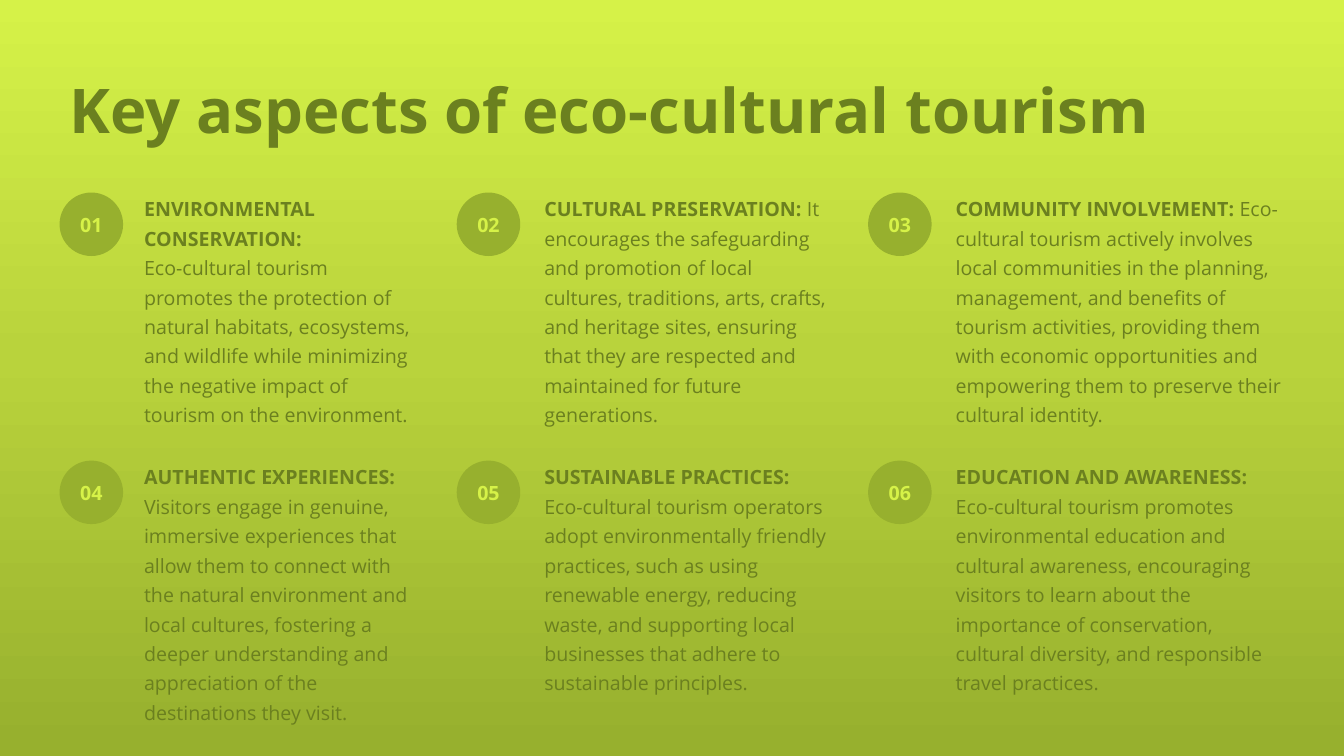
import copy
from dataclasses import dataclass

import pptx
import pptx.dml.color
import pptx.enum.shapes
import pptx.enum.text
import pptx.slide
import pptx.text.text
import pptx.util

FONT = "Open Sans"
LIME, MOSS, OLIVE = "D6F248", "97B02E", "6B801F"
GRADIENT = [(0, LIME), (0.47, "B9D33C"), (0.99, MOSS)]
WIDTH, HEIGHT = pptx.util.Inches(13.33), pptx.util.Inches(7.5)


@dataclass(frozen=True)
class Box:
    """Left, top, width and height in percent of the slide."""

    left: float
    top: float
    width: float
    height: float

    def emu(self) -> tuple[int, int, int, int]:
        return (
            round(WIDTH * self.left / 100),
            round(HEIGHT * self.top / 100),
            round(WIDTH * self.width / 100),
            round(HEIGHT * self.height / 100),
        )


@dataclass(frozen=True)
class Column:
    badge: float
    text: float
    width: float


@dataclass(frozen=True)
class Aspect:
    heading: str
    body: str
    height: float = 32.4
    break_after: bool = False


TITLE = Box(4.43, 5.33, 83.27, 19.33)
COLUMNS = [Column(4.43, 9.98, 21.9), Column(33.98, 39.76, 22.8), Column(64.59, 70.37, 26.03)]
ROWS = [24.67, 60.13]
BADGE_DROP, BADGE_WIDTH, BADGE_HEIGHT = 0.8, 4.73, 8.4

ASPECTS = [
    Aspect(
        "ENVIRONMENTAL CONSERVATION: ",
        "Eco-cultural tourism promotes the protection of natural habitats, ecosystems, and "
        "wildlife while minimizing the negative impact of tourism on the environment.",
        break_after=True,
    ),
    Aspect(
        "CULTURAL PRESERVATION: ",
        "It encourages the safeguarding and promotion of local cultures, traditions, arts, "
        "crafts, and heritage sites, ensuring that they are respected and maintained for "
        "future generations.",
    ),
    Aspect(
        "COMMUNITY INVOLVEMENT: ",
        "Eco-cultural tourism actively involves local communities in the planning, management, "
        "and benefits of tourism activities, providing them with economic opportunities and "
        "empowering them to preserve their cultural identity.",
    ),
    Aspect(
        "AUTHENTIC EXPERIENCES: ",
        "Visitors engage in genuine, immersive experiences that allow them to connect with the "
        "natural environment and local cultures, fostering a deeper understanding and "
        "appreciation of the destinations they visit.",
        height=36.4,
    ),
    Aspect(
        "SUSTAINABLE PRACTICES: ",
        "Eco-cultural tourism operators adopt environmentally friendly practices, such as using "
        "renewable energy, reducing waste, and supporting local businesses that adhere to "
        "sustainable principles.",
    ),
    Aspect(
        "EDUCATION AND AWARENESS: ",
        "Eco-cultural tourism promotes environmental education and cultural awareness, "
        "encouraging visitors to learn about the importance of conservation, cultural "
        "diversity, and responsible travel practices.",
    ),
]


def rgb(value: str) -> pptx.dml.color.RGBColor:
    return pptx.dml.color.RGBColor.from_string(value)


def set_font(p: pptx.text.text._Paragraph, size: float, color: str, bold: bool | None = None) -> None:
    p.font.name = FONT
    p.font.size = pptx.util.Pt(size)
    p.font.bold = bold
    p.font.color.rgb = rgb(color)


def paint_background(s: pptx.slide.Slide) -> None:
    fill = s.background.fill
    fill.gradient()
    fill.gradient_angle = 270
    stops = s.element.xpath(".//a:gsLst")[0]
    stops.append(copy.deepcopy(stops[0]))
    for stop, (position, color) in zip(fill.gradient_stops, GRADIENT):
        stop.position = position
        stop.color.rgb = rgb(color)


def add_title(s: pptx.slide.Slide, text: str) -> None:
    tf = s.shapes.add_textbox(*TITLE.emu()).text_frame
    tf.word_wrap = True
    tf.vertical_anchor = pptx.enum.text.MSO_ANCHOR.MIDDLE
    p = tf.paragraphs[0]
    p.text = text
    p.line_spacing = 0.9
    set_font(p, 44, OLIVE, True)


def add_badge(s: pptx.slide.Slide, box: Box, label: str) -> None:
    sp = s.shapes.add_shape(pptx.enum.shapes.MSO_SHAPE.OVAL, *box.emu())
    sp.shadow.inherit = False
    sp.fill.solid()
    sp.fill.fore_color.rgb = rgb(MOSS)
    sp.line.fill.background()
    tf = sp.text_frame
    tf.word_wrap = False
    tf.vertical_anchor = pptx.enum.text.MSO_ANCHOR.MIDDLE
    p = tf.paragraphs[0]
    p.text = label
    p.alignment = pptx.enum.text.PP_ALIGN.CENTER
    set_font(p, 14, LIME, True)


def add_aspect(s: pptx.slide.Slide, box: Box, aspect: Aspect) -> None:
    tf = s.shapes.add_textbox(*box.emu()).text_frame
    tf.word_wrap = True
    tf.auto_size = pptx.enum.text.MSO_AUTO_SIZE.SHAPE_TO_FIT_TEXT
    p = tf.paragraphs[0]
    p.line_spacing = 1.25
    p.space_after = pptx.util.Pt(6)
    set_font(p, 14, OLIVE)
    r = p.add_run()
    r.text = aspect.heading
    r.font.bold = True
    if aspect.break_after:
        p.add_line_break()
    p.add_run().text = aspect.body


def main() -> None:
    prs = pptx.Presentation()
    prs.slide_width, prs.slide_height = WIDTH, HEIGHT
    s = prs.slides.add_slide(prs.slide_layouts[6])
    paint_background(s)
    add_title(s, "Key aspects of eco-cultural tourism")
    for i, aspect in enumerate(ASPECTS):
        row, column = divmod(i, len(COLUMNS))
        top, col = ROWS[row], COLUMNS[column]
        add_aspect(s, Box(col.text, top, col.width, aspect.height), aspect)
        badge = Box(col.badge, top + BADGE_DROP, BADGE_WIDTH, BADGE_HEIGHT)
        add_badge(s, badge, f"{i + 1:02}")
    prs.save("out.pptx")


if __name__ == "__main__":
    main()
